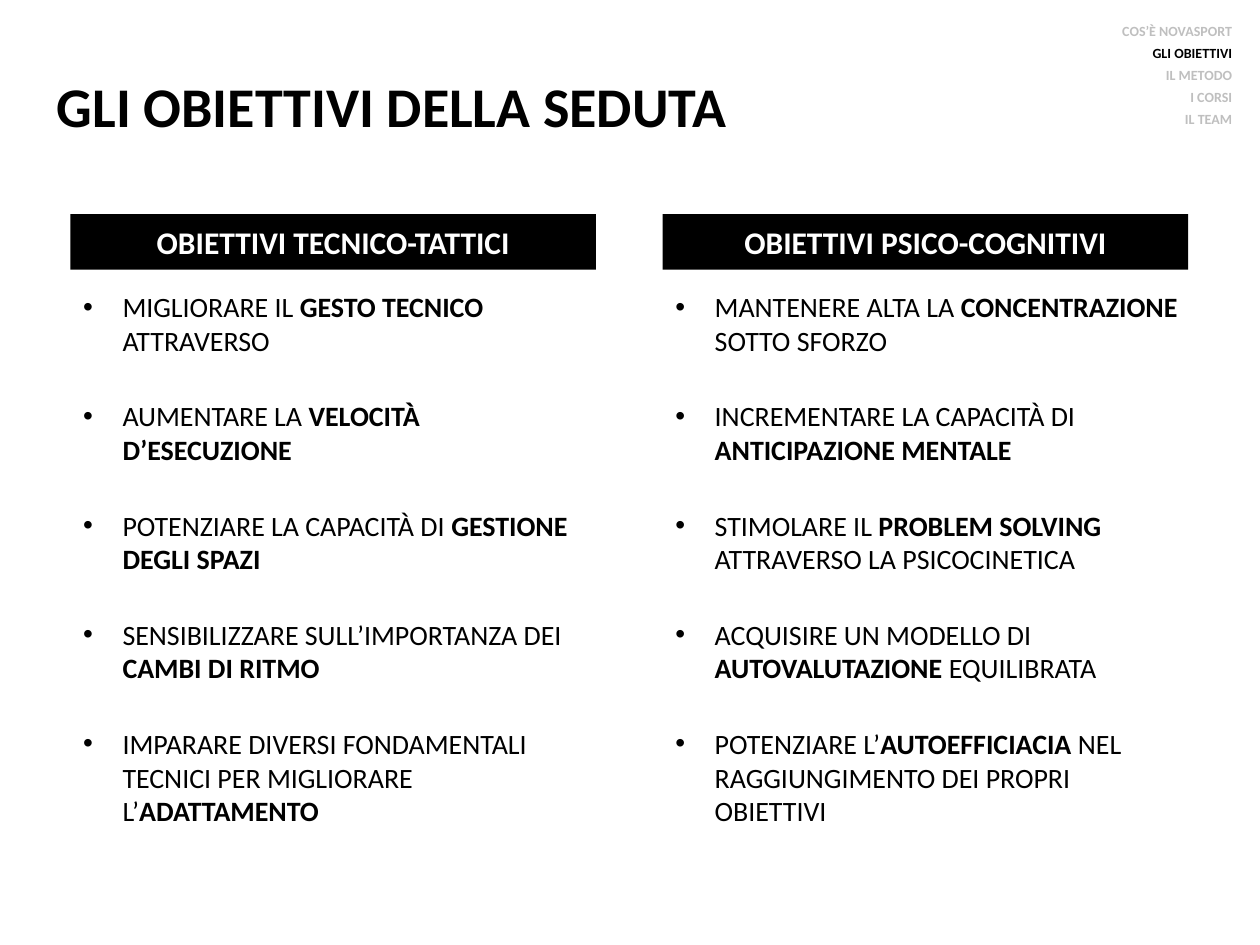
from dataclasses import dataclass

from pptx import Presentation
from pptx.dml.color import RGBColor
from pptx.enum import shapes, text
from pptx.util import Pt

FONT = "Calibri"
COLORS = {"ink": "000000", "paper": "FFFFFF", "muted": "BFBFBF"}
BULLET_INDENT = Pt(22.5)
COLUMN_LEFT, COLUMN_STEP = 40.3, 338.4


@dataclass
class Column:
    heading: str
    goals: list[str]  # asterisks enclose bold words


COLUMNS = [
    Column("OBIETTIVI TECNICO-TATTICI", [
        "MIGLIORARE IL *GESTO TECNICO *ATTRAVERSO",
        "AUMENTARE LA *VELOCITÀ D’ESECUZIONE*",
        "POTENZIARE LA CAPACITÀ DI *GESTIONE DEGLI SPAZI*",
        "SENSIBILIZZARE SULL’IMPORTANZA DEI *CAMBI DI RITMO*",
        "IMPARARE DIVERSI FONDAMENTALI TECNICI PER MIGLIORARE L’*ADATTAMENTO*",
    ]),
    Column("OBIETTIVI PSICO-COGNITIVI", [
        "MANTENERE ALTA LA *CONCENTRAZIONE* SOTTO SFORZO",
        "INCREMENTARE LA CAPACITÀ DI *ANTICIPAZIONE MENTALE*",
        "STIMOLARE IL *PROBLEM SOLVING* ATTRAVERSO LA PSICOCINETICA",
        "ACQUISIRE UN MODELLO DI *AUTOVALUTAZIONE *EQUILIBRATA",
        "POTENZIARE L’*AUTOEFFICIACIA* NEL RAGGIUNGIMENTO DEI PROPRI OBIETTIVI",
    ]),
]
SECTIONS = ["COS’È NOVASPORT", "GLI OBIETTIVI", "IL METODO", "I CORSI", "IL TEAM"]
CURRENT_SECTION = "GLI OBIETTIVI"


def place(box, left: float, top: float, width: float, height: float) -> None:
    box.left, box.top, box.width, box.height = map(Pt, (left, top, width, height))


def prepare(box, anchor=text.MSO_ANCHOR.TOP):
    frame = box.text_frame
    frame.word_wrap = True
    frame.auto_size = text.MSO_AUTO_SIZE.NONE
    frame.vertical_anchor = anchor
    return frame


def write(frame, content: str, *, size: float, color: str = "ink", bold: bool = False,
          align=text.PP_ALIGN.LEFT, after: float = 0, bulleted: bool = False) -> None:
    """Add a paragraph, using the empty first one if it is still free."""
    para = frame.paragraphs[0] if not frame.text else frame.add_paragraph()
    para.alignment = align
    para.space_before, para.space_after = Pt(0), Pt(after)
    if bulleted:
        properties = para._p.get_or_add_pPr()
        properties.set("marL", str(BULLET_INDENT))
        properties.set("indent", str(-BULLET_INDENT))
    for number, piece in enumerate(content.split("*")):
        if piece:
            span = para.add_run()
            span.text = piece
            span.font.name = FONT
            span.font.size = Pt(size)
            span.font.bold = bold or number % 2 == 1
            span.font.color.rgb = RGBColor.from_string(COLORS[color])


def draw_column(page, body, column: Column, left: float) -> None:
    # Heading bar
    bar = page.shapes.add_shape(shapes.MSO_SHAPE.RECTANGLE,
                                Pt(left), Pt(122.4), Pt(300.3), Pt(31.7))
    bar.shadow.inherit = False
    bar.fill.solid()
    bar.fill.fore_color.rgb = RGBColor.from_string(COLORS["ink"])
    bar.line.fill.background()
    write(prepare(bar, text.MSO_ANCHOR.MIDDLE), column.heading, size=18,
          color="paper", bold=True, align=text.PP_ALIGN.CENTER)

    # Bulleted goals
    place(body, left, 162, 303.1, 334.8)
    frame = prepare(body)
    for goal in column.goals:
        write(frame, goal, size=16, after=24, bulleted=True)


def draw_navigation(page) -> None:
    box = page.shapes.add_textbox(Pt(519.8), Pt(9.4), Pt(191.5), Pt(73.4))
    frame = prepare(box)
    for section in SECTIONS:
        write(frame, section, size=8, bold=True, align=text.PP_ALIGN.RIGHT, after=3,
              color="ink" if section == CURRENT_SECTION else "muted")


def main() -> None:
    deck = Presentation()
    deck.slide_width, deck.slide_height = Pt(720), Pt(540)
    page = deck.slides.add_slide(deck.slide_layouts.get_by_name("Two Content"))
    title, *bodies = page.placeholders

    # Title
    place(title, 25.2, 15.1, 613.4, 90)
    write(prepare(title, text.MSO_ANCHOR.MIDDLE), "GLI OBIETTIVI DELLA SEDUTA",
          size=32, bold=True)

    # Two columns and section list
    for index, (body, column) in enumerate(zip(bodies, COLUMNS)):
        draw_column(page, body, column, COLUMN_LEFT + index * COLUMN_STEP)
    draw_navigation(page)

    deck.save("out.pptx")


if __name__ == "__main__":
    main()
